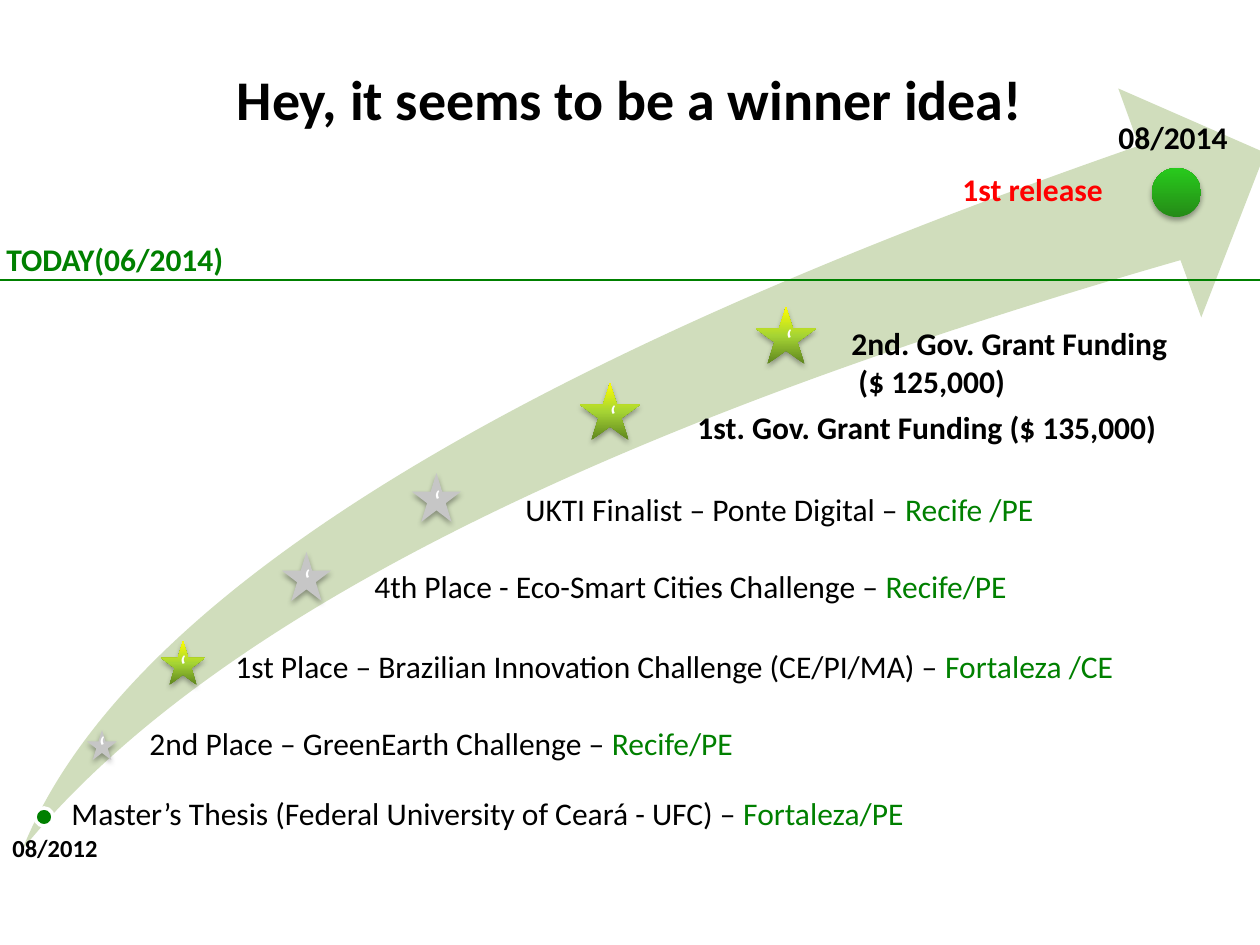
from lxml import etree
from pptx import Presentation
from pptx import util as u
from pptx.dml.color import RGBColor
from pptx.enum import shapes, text
from pptx.oxml import parse_xml
from pptx.oxml.ns import qn, nsdecls

PX = 914400 / 126
BLACK, GREEN, RED, WHITE = "000000", "008000", "FF0000", "FFFFFF"
GOLD = [(0, "5E861E"), (50, "A6D434"), (100, "FFFF00")]
SILVER = [(0, "C6C6C6"), (100, "C6C6C6")]
LIME = [(0, "258B17"), (100, "28CA1C")]

prs = Presentation()
prs.slide_width, prs.slide_height = u.Inches(10), u.Inches(7.5)
s = prs.slides.add_slide(prs.slide_layouts[6])


def write(tf, *lines, size=18, bold=False, color=BLACK, accent=GREEN,
          align=text.PP_ALIGN.LEFT, wrap=True):
    """Write one paragraph per line; a line's part after '|' takes the accent colour."""
    tf.word_wrap = wrap
    for i, line in enumerate(lines):
        p = tf.paragraphs[0] if i == 0 else tf.add_paragraph()
        p.alignment = align
        for part, c in zip(line.split("|"), (color, accent)):
            r = p.add_run()
            r.text = part
            r.font.name, r.font.size, r.font.bold = "Calibri", u.Pt(size), bold
            r.font.color.rgb = RGBColor.from_string(c)


def shape(kind, x, y, w, h, fill):
    """Add a flat shape for a hex fill, or a shaded one with a shadow for a list of stops."""
    sp = s.shapes.add_shape(kind, *(round(v * PX) for v in (x, y, w, h)))
    sp.shadow.inherit = False
    sp.line.fill.background()
    if isinstance(fill, str):
        sp.fill.solid()
        sp.fill.fore_color.rgb = RGBColor.from_string(fill)
        return sp
    sp.fill.gradient()
    sp.fill.gradient_angle = 90
    stops = sp._element.spPr.find(qn("a:gradFill")).find(qn("a:gsLst"))
    for old in list(stops):
        stops.remove(old)
    for pos, c in fill:
        gs = etree.SubElement(stops, qn("a:gs"), pos=str(pos * 1000))
        etree.SubElement(gs, qn("a:srgbClr"), val=c)
    sp._element.spPr.find(qn("a:effectLst")).append(parse_xml(
        f'<a:outerShdw {nsdecls("a")} blurRad="39370" dist="22860" dir="5400000" '
        'rotWithShape="0"><a:srgbClr val="000000"><a:alpha val="35000"/>'
        '</a:srgbClr></a:outerShdw>'))
    return sp


# Growth arrow
arrow = shape(shapes.MSO_SHAPE.SWOOSH_ARROW, -53, 212, 1371, 484, "D0DDBC")
arrow.rotation = 346.5
arrow.adjustments[0] = arrow.adjustments[1] = 0.25

# Start and release dots
start = shape(shapes.MSO_SHAPE.OVAL, 35, 808, 18, 18, GREEN)
start.line.color.rgb = RGBColor.from_string(WHITE)
start.line.width = u.Pt(2)
shape(shapes.MSO_SHAPE.OVAL, 1152, 168, 49, 49, LIME)

# Today line
line = s.shapes.add_connector(shapes.MSO_CONNECTOR.STRAIGHT,
                              *(round(v * PX) for v in (-25, 280, 1295, 280)))
line.line.color.rgb = RGBColor.from_string(GREEN)
line.line.width = u.Pt(1.5)
etree.SubElement(line._element.spPr, qn("a:effectLst"))

# Award stars
for x, y, w, h, fill in [
    (87, 730, 30, 30, SILVER),
    (161, 641, 44, 44, GOLD),
    (282, 552, 49, 49, SILVER),
    (412, 473, 49, 49, SILVER),
    (580, 383, 60, 57, GOLD),
    (756, 307, 60, 57, GOLD),
]:
    star = shape(shapes.MSO_SHAPE.STAR_5_POINT, x, y, w, h, fill)
    star.text_frame.vertical_anchor = text.MSO_ANCHOR.MIDDLE
    write(star.text_frame, "‘", color=WHITE, align=text.PP_ALIGN.CENTER)

# Title, milestones and dates
for x, y, w, h, lines, fmt in [
    (0, 58, 1260, 57, ["Hey, it seems to be a winner idea!"],
     dict(size=32, bold=True, align=text.PP_ALIGN.CENTER)),
    (59, 788, 863, 50,
     ["Master’s Thesis (Federal University of Ceará - UFC) – |Fortaleza/PE"], dict(wrap=False)),
    (137, 718, 624, 50, ["2nd Place – GreenEarth Challenge – |Recife/PE"], dict(wrap=False)),
    (223, 641, 932, 50,
     ["1st Place – Brazilian Innovation Challenge (CE/PI/MA) – |Fortaleza /CE"],
     dict(wrap=False)),
    (362, 561, 665, 50, ["4th Place - Eco-Smart Cities Challenge – |Recife/PE"],
     dict(wrap=False)),
    (513, 484, 554, 50, ["UKTI Finalist – Ponte Digital – |Recife /PE"], dict(wrap=False)),
    (685, 402, 559, 50, ["1st. Gov. Grant Funding ($ 135,000)"], dict(bold=True)),
    (839, 318, 559, 89, ["2nd. Gov. Grant Funding", " ($ 125,000)"], dict(bold=True)),
    (950, 164, 175, 50, ["1st release"], dict(bold=True, color=RED)),
    (0, 827, 112, 43, ["08/2012"], dict(size=14, bold=True, wrap=False)),
    (-6, 234, 244, 50, ["TODAY(06/2014)"], dict(bold=True, color=GREEN, wrap=False)),
    (1106, 112, 136, 50, ["08/2014"], dict(bold=True, wrap=False)),
]:
    box = s.shapes.add_textbox(*(round(v * PX) for v in (x, y, w, h)))
    write(box.text_frame, *lines, **fmt)

prs.save("out.pptx")
